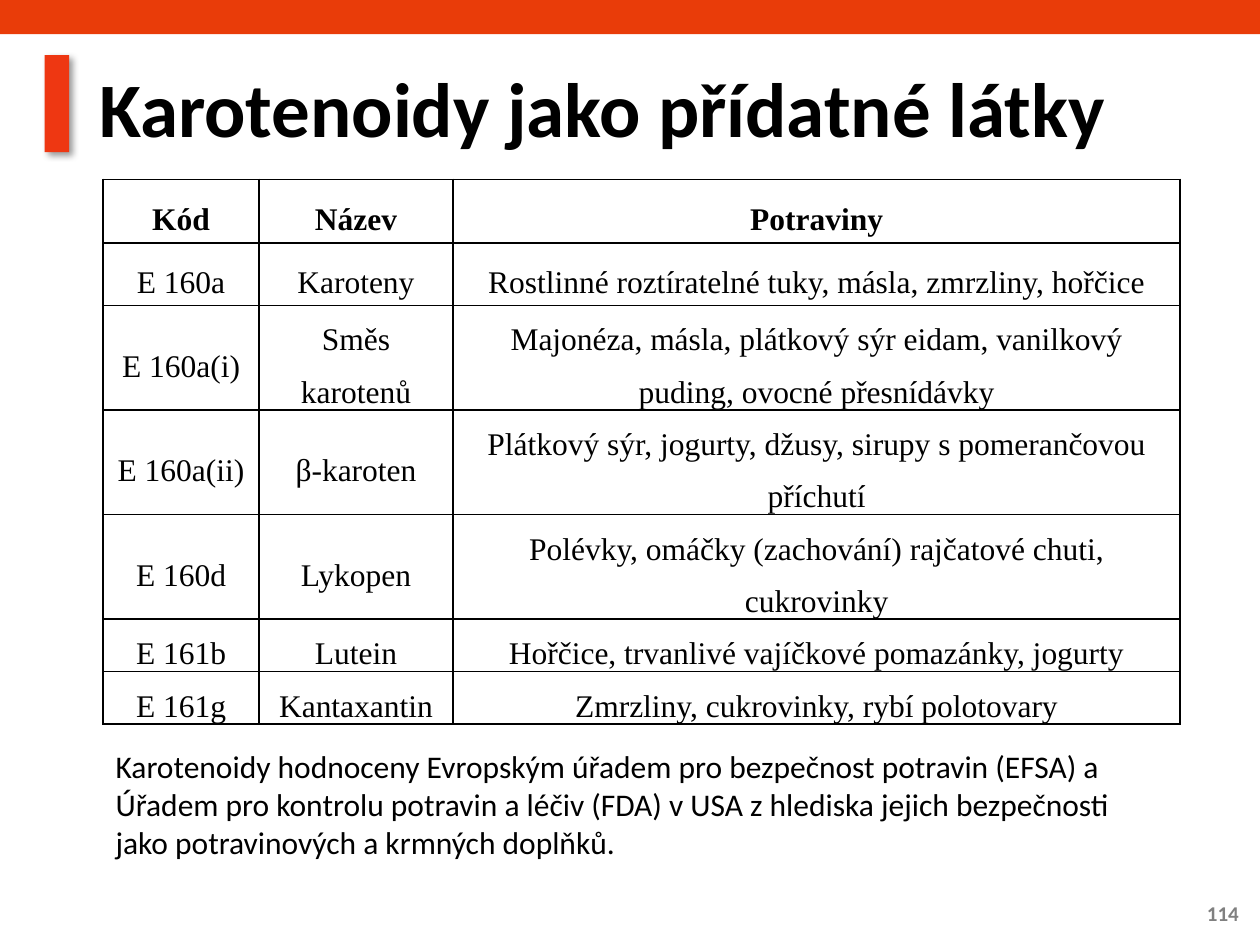
from dataclasses import dataclass, field

import lxml.etree
import pptx
import pptx.dml.color
import pptx.enum.shapes
import pptx.enum.text
import pptx.oxml
import pptx.oxml.ns
import pptx.presentation
import pptx.shapes.autoshape
import pptx.slide
import pptx.table
import pptx.util

Pt = pptx.util.Pt
RGBColor = pptx.dml.color.RGBColor
PP_ALIGN = pptx.enum.text.PP_ALIGN
MSO_ANCHOR = pptx.enum.text.MSO_ANCHOR
qn = pptx.oxml.ns.qn

BLACK = RGBColor(0x00, 0x00, 0x00)
GRAY = RGBColor(0x80, 0x80, 0x80)
BAND_ORANGE = RGBColor(0xE9, 0x3C, 0x09)
ACCENT_RED = RGBColor(0xEE, 0x37, 0x12)
DRAWING_NAMESPACE = "http://schemas.openxmlformats.org/drawingml/2006/main"


@dataclass
class Box:
    left: float
    top: float
    width: float
    height: float

    def lengths(self) -> list[pptx.util.Length]:
        return [Pt(value) for value in (self.left, self.top, self.width, self.height)]


@dataclass
class Bar:
    box: Box
    color: RGBColor


@dataclass
class Label:
    box: Box
    text: str
    font: dict
    paragraph: dict = field(default_factory=dict)
    anchor: MSO_ANCHOR = MSO_ANCHOR.TOP


TOP_BAND = Bar(Box(0, 0, 720, 19.5), BAND_ORANGE)
TITLE_ACCENT = Bar(Box(25.5, 31.5, 14, 55.5), ACCENT_RED)

LABELS = [
    Label(Box(666, 507.5, 49, 29), "114", {"size": Pt(12), "bold": True, "color": GRAY},
          {"alignment": PP_ALIGN.RIGHT}, MSO_ANCHOR.MIDDLE),
    Label(Box(49.5, 29, 651.5, 70.5), "Karotenoidy jako přídatné látky",
          {"size": Pt(44), "bold": True, "color": BLACK},
          {"line_spacing": 0.9}, MSO_ANCHOR.MIDDLE),
    Label(Box(59, 423.5, 615.5, 72.5),
          "Karotenoidy hodnoceny Evropským úřadem pro bezpečnost potravin (EFSA) a "
          "Úřadem pro kontrolu potravin a léčiv (FDA) v USA z hlediska jejich bezpečnosti "
          "jako potravinových a krmných doplňků.",
          {"size": Pt(18), "color": BLACK}),
]

TABLE_LEFT, TABLE_TOP = 59, 102.5
COLUMN_WIDTHS = [89, 111, 415.5]
ROW_HEIGHTS = [36.5, 35.5, 55.5, 48, 44.5, 29.5, 26]
ADDITIVES = [
    ("Kód", "Název", "Potraviny"),
    ("E 160a", "Karoteny", "Rostlinné roztíratelné tuky, másla, zmrzliny, hořčice"),
    ("E 160a(i)", "Směs karotenů",
     "Majonéza, másla, plátkový sýr eidam, vanilkový puding, ovocné přesnídávky"),
    ("E 160a(ii)", "β-karoten", "Plátkový sýr, jogurty, džusy, sirupy s pomerančovou příchutí"),
    ("E 160d", "Lykopen", "Polévky, omáčky (zachování) rajčatové chuti, cukrovinky"),
    ("E 161b", "Lutein", "Hořčice, trvanlivé vajíčkové pomazánky, jogurty"),
    ("E 161g", "Kantaxantin", "Zmrzliny, cukrovinky, rybí polotovary"),
]


def set_attributes(target: object, values: dict) -> None:
    for name, value in values.items():
        setattr(target, name, value)


def format_paragraph(paragraph, font: dict, values: dict) -> None:
    set_attributes(paragraph, values)
    for name, value in font.items():
        if name == "color":
            paragraph.font.color.rgb = value
        else:
            setattr(paragraph.font, name, value)


def add_bar(slide: pptx.slide.Slide, bar: Bar) -> pptx.shapes.autoshape.Shape:
    shape = slide.shapes.add_shape(
        pptx.enum.shapes.MSO_SHAPE.RECTANGLE, *bar.box.lengths())
    shape.shadow.inherit = False
    shape.fill.solid()
    shape.fill.fore_color.rgb = bar.color
    shape.line.fill.background()
    return shape


def add_shadow(shape: pptx.shapes.autoshape.Shape) -> None:
    effects = shape._element.spPr.find(qn("a:effectLst"))
    effects.append(pptx.oxml.parse_xml(
        f'<a:outerShdw xmlns:a="{DRAWING_NAMESPACE}" blurRad="{Pt(4)}" dist="{Pt(3)}" '
        'dir="2700000" algn="tl" rotWithShape="0">'
        '<a:srgbClr val="000000"><a:alpha val="40000"/></a:srgbClr></a:outerShdw>'))


def add_label(slide: pptx.slide.Slide, label: Label) -> None:
    frame = slide.shapes.add_textbox(*label.box.lengths()).text_frame
    set_attributes(frame, {"word_wrap": True, "vertical_anchor": label.anchor,
                           "text": label.text})
    format_paragraph(frame.paragraphs[0], {"name": "Calibri", **label.font}, label.paragraph)


def add_borders(cell: pptx.table._Cell) -> None:
    properties = cell._tc.get_or_add_tcPr()
    for side in ("lnL", "lnR", "lnT", "lnB"):
        line = lxml.etree.SubElement(properties, qn(f"a:{side}"), w=str(Pt(1)))
        fill = lxml.etree.SubElement(line, qn("a:solidFill"))
        lxml.etree.SubElement(fill, qn("a:srgbClr"), val=str(BLACK))


def add_additives_table(slide: pptx.slide.Slide) -> None:
    box = Box(TABLE_LEFT, TABLE_TOP, sum(COLUMN_WIDTHS), sum(ROW_HEIGHTS))
    table = slide.shapes.add_table(
        len(ROW_HEIGHTS), len(COLUMN_WIDTHS), *box.lengths()).table
    set_attributes(table, {"first_row": False, "horz_banding": False})
    for column, width in zip(table.columns, COLUMN_WIDTHS):
        column.width = Pt(width)
    for row_index, (row, height) in enumerate(zip(table.rows, ROW_HEIGHTS)):
        row.height = Pt(height)
        for cell, text in zip(row.cells, ADDITIVES[row_index]):
            set_attributes(cell, {
                "text": text, "vertical_anchor": MSO_ANCHOR.MIDDLE,
                "margin_left": Pt(5), "margin_right": Pt(5),
                "margin_top": Pt(0), "margin_bottom": Pt(0)})
            add_borders(cell)
            cell.fill.background()
            format_paragraph(
                cell.text_frame.paragraphs[0],
                {"name": "Times New Roman", "size": Pt(18), "bold": row_index == 0,
                 "color": BLACK},
                {"alignment": PP_ALIGN.CENTER, "line_spacing": 1.5})


def main() -> None:
    presentation = pptx.Presentation()
    set_attributes(presentation, {"slide_width": Pt(720), "slide_height": Pt(540)})
    slide = presentation.slides.add_slide(presentation.slide_layouts[6])

    # Decoration
    add_bar(slide, TOP_BAND)
    add_shadow(add_bar(slide, TITLE_ACCENT))

    # Table of food additives
    add_additives_table(slide)

    # Page number, title and closing note
    for label in LABELS:
        add_label(slide, label)

    presentation.save("out.pptx")


if __name__ == "__main__":
    main()
